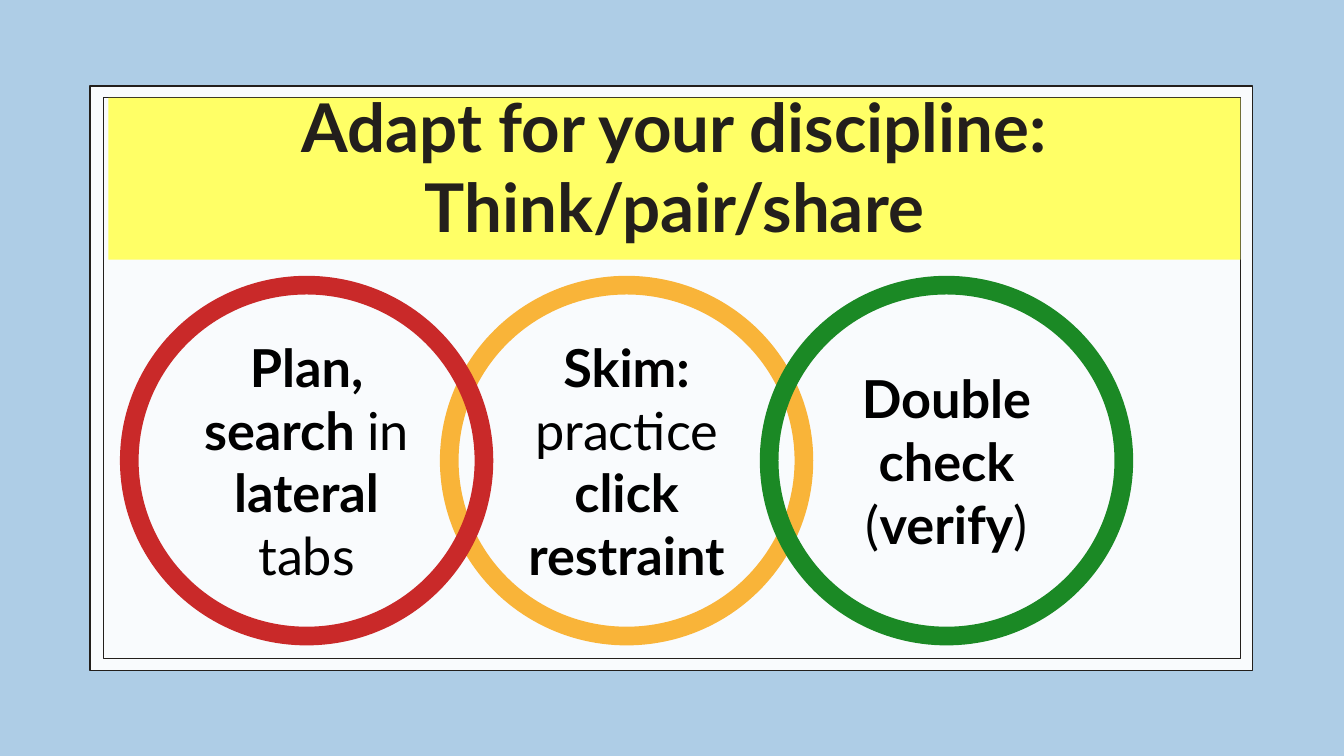
from lxml import etree
from pptx import Presentation
from pptx.dml.color import RGBColor
from pptx.enum.shapes import MSO_SHAPE
from pptx.enum.text import MSO_ANCHOR, MSO_AUTO_SIZE, PP_ALIGN
from pptx.oxml.ns import qn
from pptx.util import Pt

COLORS = {
    "sky": "AECDE6",
    "paper": "FFFFFF",
    "ink": "231F1C",
    "banner": "FFFF66",
    "text": "000000",
    "red": "C92929",
    "amber": "F9B439",
    "green": "1B8925",
}
FONT = "Lato"
HEADING = "Adapt for your discipline: Think/pair/share"

# Back to front: column, colour, (words, bold) pieces
RINGS = [
    (1, "amber", [("Skim: ", True), ("practice ", False), ("click restraint", True)]),
    (0, "red", [("Plan, search ", True), ("in ", False), ("lateral", True), (" tabs", False)]),
    (2, "green", [("Double check ", True), ("(", False), ("verify", True), (")", False)]),
]

FRAME = (48.25, 46, 622.8, 313.2)
INNER_FRAME = (55.45, 52.4, 609.1, 300.3)
BANNER = (58.1, 52.4, 606.4, 86.7)
RING_LEFT, RING_TOP, RING_PITCH = 69.25, 152.8, 171.4
RING_WIDTH, RING_HEIGHT = 190, 188
INSET = 7.2


def color(name):
    return RGBColor.from_string(COLORS[name])


def add_outline(slide, preset, box, line_color, line_width):
    outline = slide.shapes.add_shape(preset, *map(Pt, box))
    outline.shadow.inherit = False
    outline.fill.background()
    outline.line.color.rgb = color(line_color)
    outline.line.width = Pt(line_width)
    return outline


def write(shape, pieces, size, text_color, anchor):
    """Fill the shape with one centred paragraph of (words, bold) pieces."""
    frame = shape.text_frame
    frame.word_wrap = True
    frame.auto_size = MSO_AUTO_SIZE.NONE
    frame.vertical_anchor = anchor
    frame.margin_left = frame.margin_right = Pt(INSET)
    frame.margin_top = frame.margin_bottom = Pt(INSET)
    paragraph = frame.paragraphs[0]
    paragraph.alignment = PP_ALIGN.CENTER
    for words, bold in pieces:
        run = paragraph.add_run()
        run.text = words
        run.font.name = FONT
        run.font.size = Pt(size)
        run.font.bold = bold
        run.font.color.rgb = color(text_color)


def add_frames(slide):
    paper = add_outline(slide, MSO_SHAPE.RECTANGLE, FRAME, "ink", 0.75)
    paper.fill.solid()
    paper.fill.fore_color.rgb = color("paper")
    paper_color = paper.fill._xPr.find(".//" + qn("a:srgbClr"))
    etree.SubElement(paper_color, qn("a:alpha"), val="93000")
    add_outline(slide, MSO_SHAPE.RECTANGLE, INNER_FRAME, "ink", 0.75)


def add_heading(slide):
    heading = slide.shapes.title
    heading.left, heading.top, heading.width, heading.height = map(Pt, BANNER)
    heading.fill.solid()
    heading.fill.fore_color.rgb = color("banner")
    write(heading, [(HEADING, True)], 36, "ink", MSO_ANCHOR.BOTTOM)
    # Bring the banner in front of the frames
    slide.shapes._spTree.append(heading._element)


def add_rings(slide):
    for column, ring_color, pieces in RINGS:
        box = (RING_LEFT + column * RING_PITCH, RING_TOP, RING_WIDTH, RING_HEIGHT)
        ring = add_outline(slide, MSO_SHAPE.OVAL, box, ring_color, 10)
        write(ring, pieces, 28, "text", MSO_ANCHOR.MIDDLE)


def main():
    presentation = Presentation()
    presentation.slide_width, presentation.slide_height = Pt(720), Pt(405)
    slide = presentation.slides.add_slide(presentation.slide_layouts[5])
    slide.background.fill.solid()
    slide.background.fill.fore_color.rgb = color("sky")
    add_frames(slide)
    add_heading(slide)
    add_rings(slide)
    presentation.save("out.pptx")


if __name__ == "__main__":
    main()
